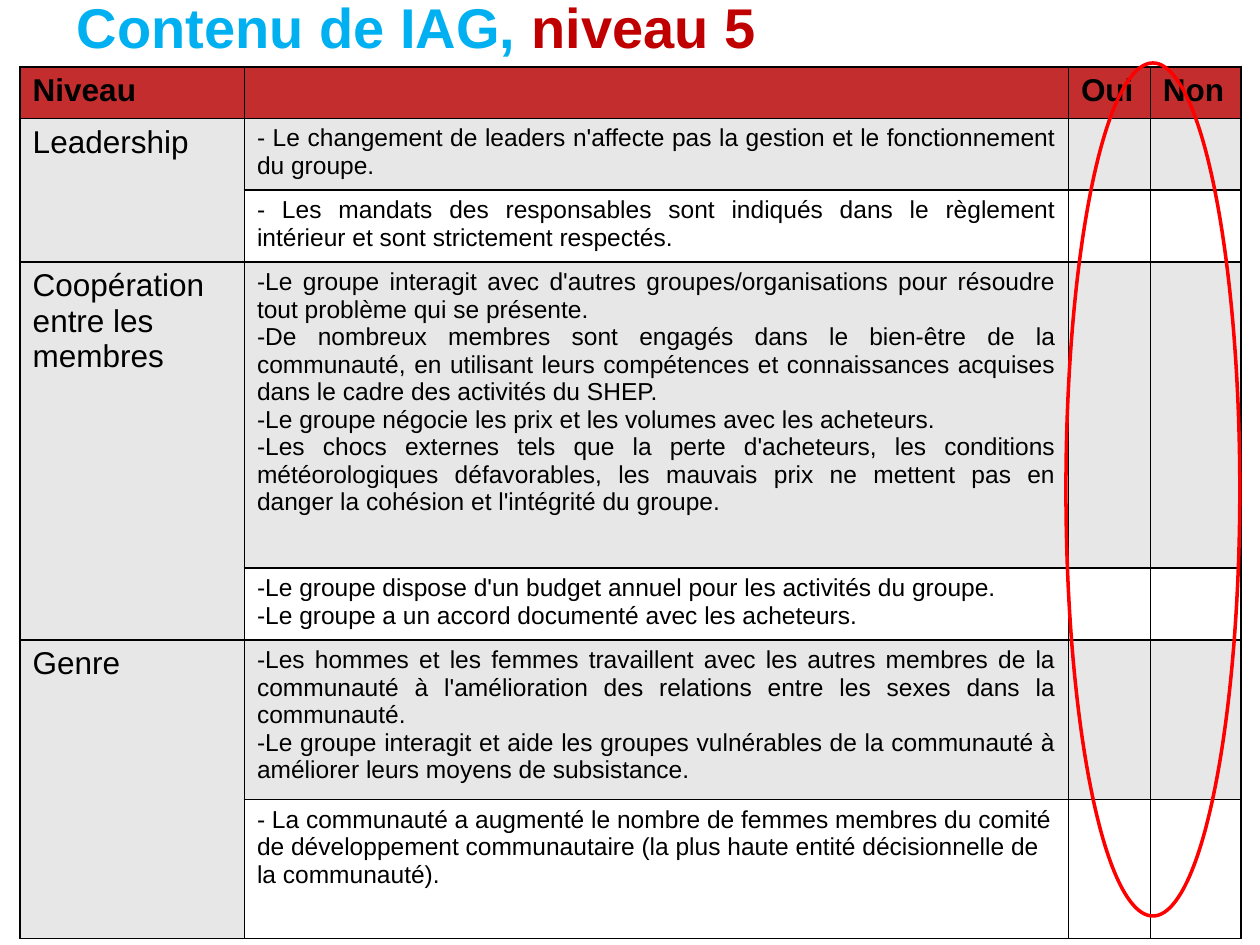
import pptx
import pptx.util
import pptx.dml.color
import pptx.enum.shapes
import pptx.enum.text
from lxml import etree
from pptx.util import Inches, Pt

RGBColor = pptx.dml.color.RGBColor
Align = pptx.enum.text.PP_ALIGN

BLUE = RGBColor(0x00, 0xB0, 0xF0)
DARK_RED = RGBColor(0xC0, 0x00, 0x00)
HEADER_RED = RGBColor(0xC3, 0x2D, 0x2E)
RING_RED = RGBColor(0xFF, 0x00, 0x00)
GREY = RGBColor(0xE7, 0xE7, 0xE7)
WHITE = RGBColor(0xFF, 0xFF, 0xFF)
BLACK = RGBColor(0x00, 0x00, 0x00)

HEADERS = ["Niveau", "", "Oui", "Non"]
COL_WIDTHS = [1.78, 6.54, 0.65, 0.72]
ROW_HEIGHTS = [0.41, 0.57, 0.57, 2.43, 0.57, 1.26, 1.1]

# Each theme covers two rows: a grey one, then a white one.
THEMES = [
    ("Leadership", [
        ["- Le changement de leaders n'affecte pas la gestion et le fonctionnement du groupe."],
        ["- Les mandats des responsables sont indiqués dans le règlement intérieur "
         "et sont strictement respectés."],
    ]),
    ("Coopération entre les membres", [
        ["-Le groupe interagit avec d'autres groupes/organisations pour résoudre "
         "tout problème qui se présente.",
         "-De nombreux membres sont engagés dans le bien-être de la communauté, en utilisant "
         "leurs compétences et connaissances acquises dans le cadre des activités du SHEP.",
         "-Le groupe négocie les prix et les volumes avec les acheteurs.",
         "-Les chocs externes tels que la perte d'acheteurs, les conditions météorologiques "
         "défavorables, les mauvais prix ne mettent pas en danger la cohésion et "
         "l'intégrité du groupe."],
        ["-Le groupe dispose d'un budget annuel pour les activités du groupe.",
         "-Le groupe a un accord documenté avec les acheteurs."],
    ]),
    ("Genre", [
        ["-Les hommes et les femmes travaillent avec les autres membres de la communauté à "
         "l'amélioration des relations entre les sexes dans la communauté.",
         "-Le groupe interagit et aide les groupes vulnérables de la communauté à améliorer "
         "leurs moyens de subsistance."],
        ["- La communauté a augmenté le nombre de femmes membres du comité de développement "
         "communautaire (la plus haute entité décisionnelle de la communauté)."],
    ]),
]


def add_run(p, text, size, color=BLACK, bold=False):
    r = p.add_run()
    r.text = text
    for name, value in {"name": "Arial", "size": Pt(size), "bold": bold}.items():
        setattr(r.font, name, value)
    r.font.color.rgb = color


def write_cell(cell, paragraphs, size, bold=False, align=Align.LEFT):
    tf = cell.text_frame
    for i, text in enumerate(paragraphs):
        p = tf.add_paragraph() if i else tf.paragraphs[0]
        p.alignment = align
        add_run(p, text, size, bold=bold)


def style_cell(cell, color):
    """Draw black borders and a solid fill; borders must precede the fill in the XML."""
    tc_pr = cell._tc.get_or_add_tcPr()
    ns = "http://schemas.openxmlformats.org/drawingml/2006/main"
    for side in ("lnL", "lnR", "lnT", "lnB"):
        ln = etree.SubElement(tc_pr, f"{{{ns}}}{side}", w=str(Pt(1)))
        fill = etree.SubElement(ln, f"{{{ns}}}solidFill")
        etree.SubElement(fill, f"{{{ns}}}srgbClr", val=str(BLACK))
    cell.fill.solid()
    cell.fill.fore_color.rgb = color


def place_title(title, left, top, width, height):
    for name, value in {"left": left, "top": top, "width": width, "height": height}.items():
        setattr(title, name, Inches(value))
    tf = title.text_frame
    frame_format = {
        "word_wrap": False,
        "auto_size": pptx.enum.text.MSO_AUTO_SIZE.SHAPE_TO_FIT_TEXT,
        "vertical_anchor": pptx.enum.text.MSO_ANCHOR.TOP,
    }
    for name, value in frame_format.items():
        setattr(tf, name, value)
    p = tf.paragraphs[0]
    p.alignment = Align.LEFT
    add_run(p, "Contenu de IAG, ", 32, BLUE, True)
    add_run(p, "niveau 5", 32, DARK_RED, True)


def add_criteria_table(s, left, top):
    box = [Inches(v) for v in (left, top, sum(COL_WIDTHS), sum(ROW_HEIGHTS))]
    table = s.shapes.add_table(len(ROW_HEIGHTS), len(COL_WIDTHS), *box).table
    for column, width in zip(table.columns, COL_WIDTHS):
        column.width = Inches(width)
    for row, height in zip(table.rows, ROW_HEIGHTS):
        row.height = Inches(height)

    for i, row in enumerate(table.rows):
        for j, cell in enumerate(row.cells):
            banded = GREY if i % 2 or j == 0 else WHITE
            style_cell(cell, banded if i else HEADER_RED)

    for j, header in enumerate(HEADERS):
        if header:
            write_cell(table.cell(0, j), [header], 18, bold=True)

    last_row = len(ROW_HEIGHTS) - 1
    for t, (theme, criteria) in enumerate(THEMES):
        first = 1 + 2 * t
        table.cell(first, 0).merge(table.cell(first + 1, 0))
        write_cell(table.cell(first, 0), [theme], 18)
        for i, paragraphs in enumerate(criteria, first):
            align = Align.LEFT if i == last_row else Align.JUSTIFY
            write_cell(table.cell(i, 1), paragraphs, 14, align=align)


def add_answer_ring(s, left, top, width, height):
    """Circle the Oui and Non columns."""
    box = [Inches(v) for v in (left, top, width, height)]
    ring = s.shapes.add_shape(pptx.enum.shapes.MSO_SHAPE.OVAL, *box)
    ring.shadow.inherit = False
    ring.fill.background()
    ring.line.color.rgb = RING_RED
    ring.line.width = Pt(2)


def main():
    prs = pptx.Presentation()
    prs.slide_width, prs.slide_height = Inches(10), Inches(7.5)
    s = prs.slides.add_slide(prs.slide_layouts.get_by_name("Title Only"))
    place_title(s.shapes.title, 0.51, -0.11, 5.63, 0.64)
    add_criteria_table(s, 0.16, 0.53)
    add_answer_ring(s, 8.46, 0.5, 1.38, 6.77)
    prs.save("out.pptx")


if __name__ == "__main__":
    main()
